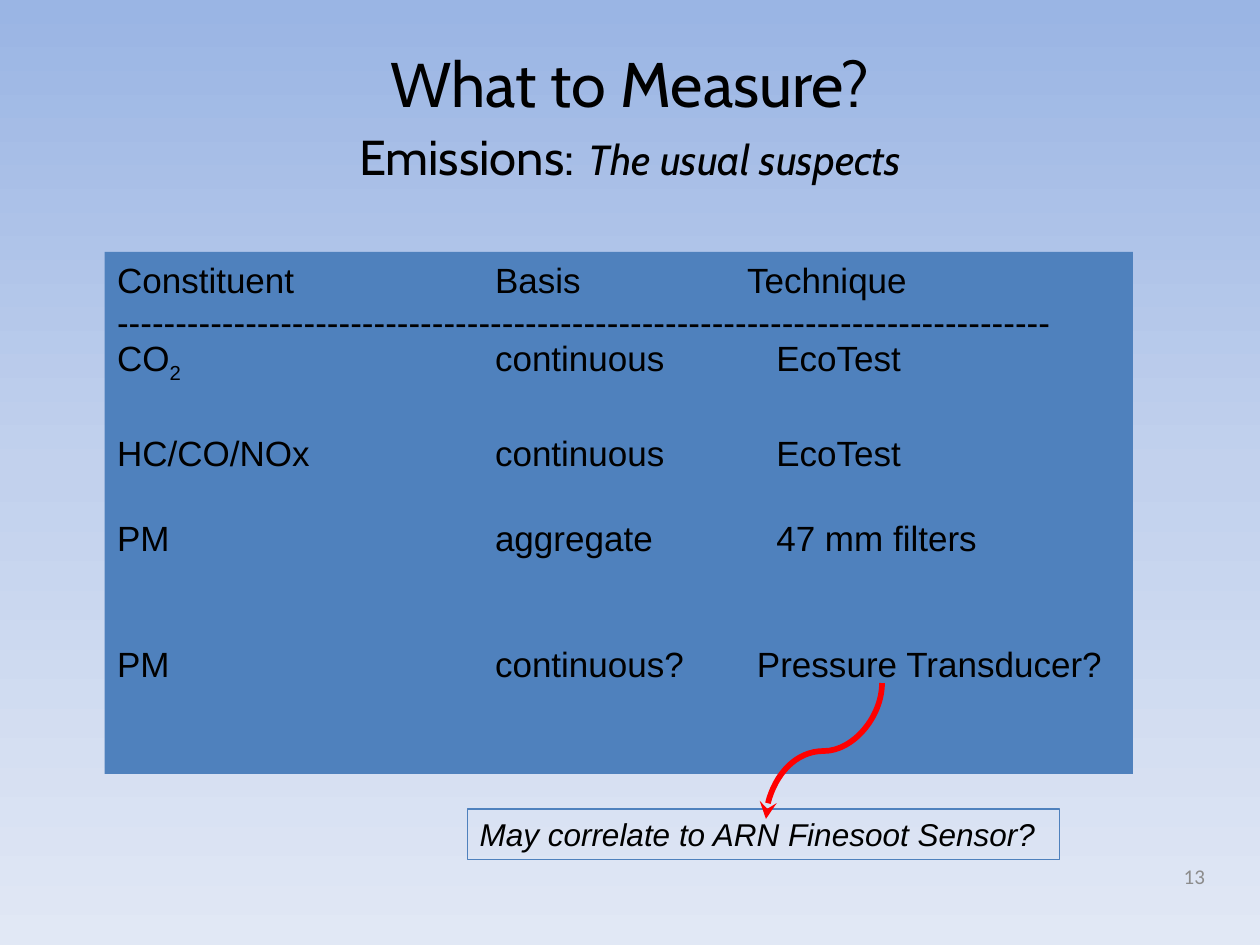
"""Build the emissions measurement slide."""
from copy import deepcopy

from lxml import etree
from pptx import Presentation
from pptx.dml.color import RGBColor
from pptx.enum.shapes import MSO_CONNECTOR, MSO_SHAPE
from pptx.enum.text import MSO_ANCHOR, MSO_AUTO_SIZE, PP_ALIGN
from pptx.oxml.ns import qn
from pptx.util import Cm, Pt

RECT, CURVE = MSO_SHAPE.RECTANGLE, MSO_CONNECTOR.CURVE
TOP, MIDDLE, BOTTOM = MSO_ANCHOR.TOP, MSO_ANCHOR.MIDDLE, MSO_ANCHOR.BOTTOM
LEFT, CENTER, RIGHT = PP_ALIGN.LEFT, PP_ALIGN.CENTER, PP_ALIGN.RIGHT
FIXED = MSO_AUTO_SIZE.NONE

BLACK = RGBColor(0x00, 0x00, 0x00)
BLUE = RGBColor(0x4F, 0x81, 0xBD)
RED = RGBColor(0xFF, 0x00, 0x00)
GRAY = RGBColor(0x8C, 0x8C, 0x8C)
SKY = [
    (0, RGBColor(0x9A, 0xB5, 0xE4)),
    (0.5, RGBColor(0xC2, 0xD1, 0xED)),
    (1, RGBColor(0xE1, 0xE8, 0xF5)),
]

HEAD = "What to Measure?"
SUB = [("Emissions:", 28, False), (" ", 36, False), ("The usual suspects", 24, True)]
NOTE = "May correlate to ARN Finesoot Sensor?"
PAGE = "13"
BASIS = 7.62
ROWS = [
    (("Constituent", "Basis", "Technique"), 12.7, 0),
    (("-" * 80,), 12.7, 0),
    (("CO", "continuous", "EcoTest"), 13.29, 0),
    (("HC/CO/NOx", "continuous", "EcoTest"), 13.29, 27),
    (("PM", "aggregate", "47 mm filters"), 13.29, 24.5),
    (("PM", "continuous?", "Pressure Transducer?"), 12.9, 48),
]

TITLE_BOX = (1.27, 0.76, 22.86, 3.18)
PANEL_BOX = (2.11, 5.08, 20.73, 10.52)
NOTE_BOX = (9.42, 16.31, 11.94, 1.02)
PAGE_BOX = (18.62, 17.15, 5.92, 1.02)
ARROW = (15.24, 13.97, 17.98, 16.31)


def lengths(box):
    return [Cm(v) for v in box]


def style(par, name, color, size=None, italic=None):
    font = par.font
    font.name, font.italic = name, italic
    font.color.rgb = color
    if size:
        font.size = Pt(size)


def add_run(par, text, size=None, italic=None):
    run = par.add_run()
    run.text = text
    run.font.italic = italic
    if size:
        run.font.size = Pt(size)
    return run


def add_label(slide, box, text, anchor, align):
    label = slide.shapes.add_textbox(*lengths(box))
    frame = label.text_frame
    frame.word_wrap, frame.vertical_anchor = True, anchor
    par = frame.paragraphs[0]
    par.text, par.alignment = text, align
    return label, par


def paint_sky(slide):
    fill = slide.background.fill
    fill.gradient()
    fill.gradient_angle = 270
    first = fill.gradient_stops[0]._gs
    first.addnext(deepcopy(first))
    for stop, (spot, color) in zip(fill.gradient_stops, SKY):
        stop.position, stop.color.rgb = spot, color


def fill_title(title):
    title.left, title.top, title.width, title.height = lengths(TITLE_BOX)
    frame = title.text_frame
    frame.auto_size, frame.vertical_anchor = FIXED, BOTTOM
    par = frame.paragraphs[0]
    par.alignment, par.line_spacing = CENTER, 0.9
    style(par, "Cabin", BLACK)
    add_run(par, HEAD, 36)
    par.add_line_break()
    for text, size, italic in SUB:
        add_run(par, text, size, italic)


def set_tabs(par, stops):
    tabs = etree.SubElement(par._p.get_or_add_pPr(), qn("a:tabLst"))
    for stop in stops:
        etree.SubElement(tabs, qn("a:tab"), pos=str(Cm(stop)), algn="l")


def add_panel(slide):
    panel = slide.shapes.add_shape(RECT, *lengths(PANEL_BOX))
    panel.shadow.inherit = False
    panel.fill.solid()
    panel.fill.fore_color.rgb = BLUE
    panel.line.fill.background()
    frame = panel.text_frame
    frame.word_wrap, frame.vertical_anchor = True, TOP
    for i, (cells, last, gap) in enumerate(ROWS):
        par = frame.add_paragraph() if i else frame.paragraphs[0]
        set_tabs(par, (BASIS, last))
        par.alignment = LEFT
        par.line_spacing, par.space_before = Pt(24), Pt(gap)
        style(par, "Arial", BLACK, 20)
        if cells[0] == "CO":
            add_run(par, "CO")
            low = add_run(par, "2")
            low._r.get_or_add_rPr().set("baseline", "-25000")
            add_run(par, "\t" + "\t".join(cells[1:]))
        else:
            add_run(par, "\t".join(cells))


def add_arrow(slide):
    arrow = slide.shapes.add_connector(CURVE, *lengths(ARROW))
    arrow.line.color.rgb = RED
    arrow.line.width = Pt(3.25)
    props = arrow._element.spPr
    props.find(qn("a:xfrm")).set("rot", "5400000")
    etree.SubElement(props.find(qn("a:ln")), qn("a:tailEnd"), type="stealth")
    etree.SubElement(props, qn("a:effectLst"))


def main():
    deck = Presentation()
    deck.slide_width, deck.slide_height = Cm(25.4), Cm(19.05)
    slide = deck.slides.add_slide(deck.slide_layouts[5])
    paint_sky(slide)
    fill_title(slide.shapes.title)
    add_panel(slide)
    note, par = add_label(slide, NOTE_BOX, NOTE, TOP, LEFT)
    note.line.color.rgb, note.line.width = BLUE, Pt(0.75)
    style(par, "Arial", BLACK, 18, True)
    page, par = add_label(slide, PAGE_BOX, PAGE, MIDDLE, RIGHT)
    style(par, "Calibri", GRAY, 12)
    add_arrow(slide)
    deck.save("out.pptx")


if __name__ == "__main__":
    main()
